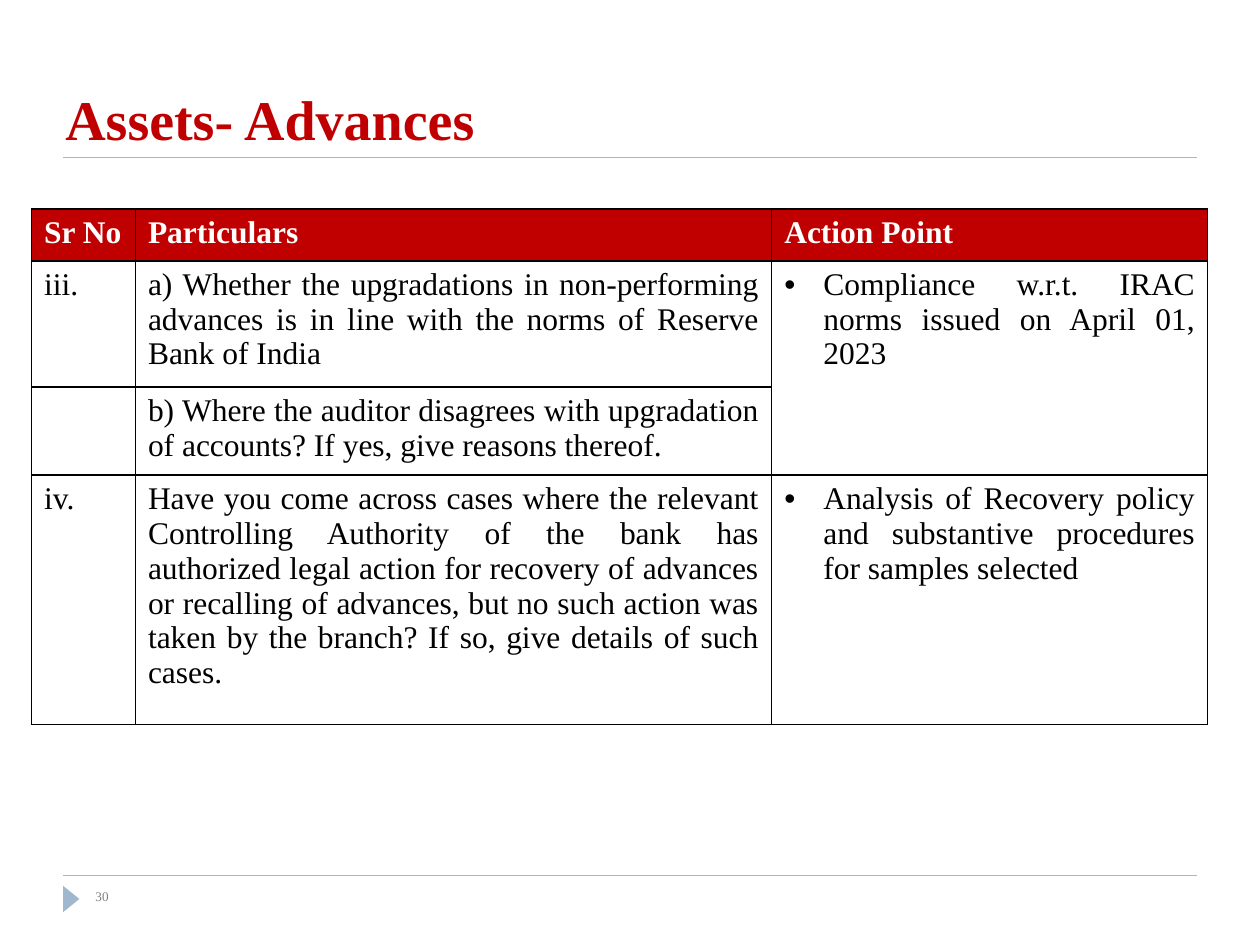
import pptx
import pptx.chart.data
import pptx.dml.color
import pptx.enum.shapes
import pptx.enum.text
import pptx.oxml
import pptx.oxml.ns
import pptx.util

COLORS = {"red": "C00000", "blue": "9FB8CD", "gray": "808080",
          "black": "000000", "white": "FFFFFF"}
FONT = "Times New Roman"
BULLET_INDENT = pptx.util.Inches(0.31)

presentation = pptx.Presentation()
presentation.slide_width = pptx.util.Inches(10)
presentation.slide_height = pptx.util.Inches(7.5)
slide = presentation.slides.add_slide(presentation.slide_layouts[6])

# The slide is a grid of 100 columns by 75 rows.
COLUMN = presentation.slide_width / 100
ROW = presentation.slide_height / 75


def place(left, top, width, height):
    """Turn grid columns and rows into slide lengths."""
    return (round(left * COLUMN), round(top * ROW),
            round(width * COLUMN), round(height * ROW))


def write_text(frame, text, size=18, color="black", bold=False,
               justified=False, bullet=False):
    frame.word_wrap = True
    paragraph = frame.paragraphs[0]
    if justified:
        paragraph.alignment = pptx.enum.text.PP_ALIGN.JUSTIFY
    if bullet:
        properties = paragraph._p.get_or_add_pPr()
        properties.set("marL", str(BULLET_INDENT))
        properties.set("indent", str(-BULLET_INDENT))
        for tag, name, value in (("buFont", "typeface", "Arial"),
                                 ("buChar", "char", "•")):
            mark = pptx.oxml.parse_xml(
                f'<a:{tag} {pptx.oxml.ns.nsdecls("a")} {name}="{value}"/>')
            properties.append(mark)
    run = paragraph.add_run()
    run.text = text
    run.font.name = FONT
    run.font.size = pptx.util.Pt(size)
    run.font.bold = bold
    run.font.color.rgb = pptx.dml.color.RGBColor.from_string(COLORS[color])


# Rules under the title and above the footer
for rule_row in (12.5, 69.5):
    left, top, width, _ = place(5, rule_row, 90, 0)
    rule = slide.shapes.add_connector(
        pptx.enum.shapes.MSO_CONNECTOR.STRAIGHT, left, top, left + width, top)
    rule.line.color.rgb = pptx.dml.color.RGBColor.from_string(COLORS["blue"])
    rule.line.width = pptx.util.Pt(0.75)
    rule._element.spPr.append(pptx.oxml.parse_xml(
        f'<a:effectLst {pptx.oxml.ns.nsdecls("a")}/>'))

# Footer marker and page number
marker = slide.shapes.add_shape(
    pptx.enum.shapes.MSO_SHAPE.ISOSCELES_TRIANGLE, *place(4.6, 70.7, 2.1, 1.3))
marker.rotation = 90
marker.shadow.inherit = False
marker.fill.solid()
marker.fill.fore_color.rgb = pptx.dml.color.RGBColor.from_string(COLORS["blue"])
marker.line.fill.background()

page_number = slide.shapes.add_textbox(*place(6.6, 70, 43.3, 3))
write_text(page_number.text_frame, "30", size=7.5, color="gray")

title = slide.shapes.add_textbox(*place(4.2, 4.2, 90, 8.3))
title.text_frame.vertical_anchor = pptx.enum.text.MSO_ANCHOR.BOTTOM
write_text(title.text_frame, "Assets- Advances", size=32, color="red", bold=True)

# Audit checklist
checklist = [
    ["Sr No", "Particulars", "Action Point"],
    ["iii.",
     "a) Whether the upgradations in non-performing advances is in line with "
     "the norms of Reserve Bank of India",
     "Compliance w.r.t. IRAC norms issued on April 01, 2023"],
    ["",
     "b) Where the auditor disagrees with upgradation of accounts? If yes, "
     "give reasons thereof.",
     ""],
    ["iv.",
     "Have you come across cases where the relevant Controlling Authority of "
     "the bank has authorized legal action for recovery of advances or "
     "recalling of advances, but no such action was taken by the branch? If "
     "so, give details of such cases.",
     "Analysis of Recovery policy and substantive procedures for samples "
     "selected"],
]
column_widths = [8.25, 50.5, 34.6]
row_heights = [4.1, 9.3, 6.5, 19.8]

table = slide.shapes.add_table(
    len(row_heights), len(column_widths),
    *place(2.5, 16.6, sum(column_widths), sum(row_heights))).table
table.horz_banding = False
table.first_row = False
for column, width in zip(table.columns, column_widths):
    column.width = round(width * COLUMN)
for row, height in zip(table.rows, row_heights):
    row.height = round(height * ROW)
table.cell(1, 2).merge(table.cell(2, 2))

for row_index, texts in enumerate(checklist):
    is_header = row_index == 0
    for column_index, text in enumerate(texts):
        cell = table.cell(row_index, column_index)
        if is_header:
            cell.fill.solid()
            cell.fill.fore_color.rgb = pptx.dml.color.RGBColor.from_string(
                COLORS["red"])
        else:
            cell.fill.background()
        if text:
            write_text(cell.text_frame, text, bold=is_header, justified=True,
                       color="white" if is_header else "black",
                       bullet=column_index == 2 and not is_header)
        cell_properties = cell._tc.get_or_add_tcPr()
        for position, side in enumerate(("lnL", "lnR", "lnT", "lnB")):
            cell_properties.insert(position, pptx.oxml.parse_xml(
                f'<a:{side} {pptx.oxml.ns.nsdecls("a")} w="{pptx.util.Pt(1)}">'
                f'<a:solidFill><a:srgbClr val="{COLORS["black"]}"/>'
                f'</a:solidFill></a:{side}>'))

presentation.save("out.pptx")
